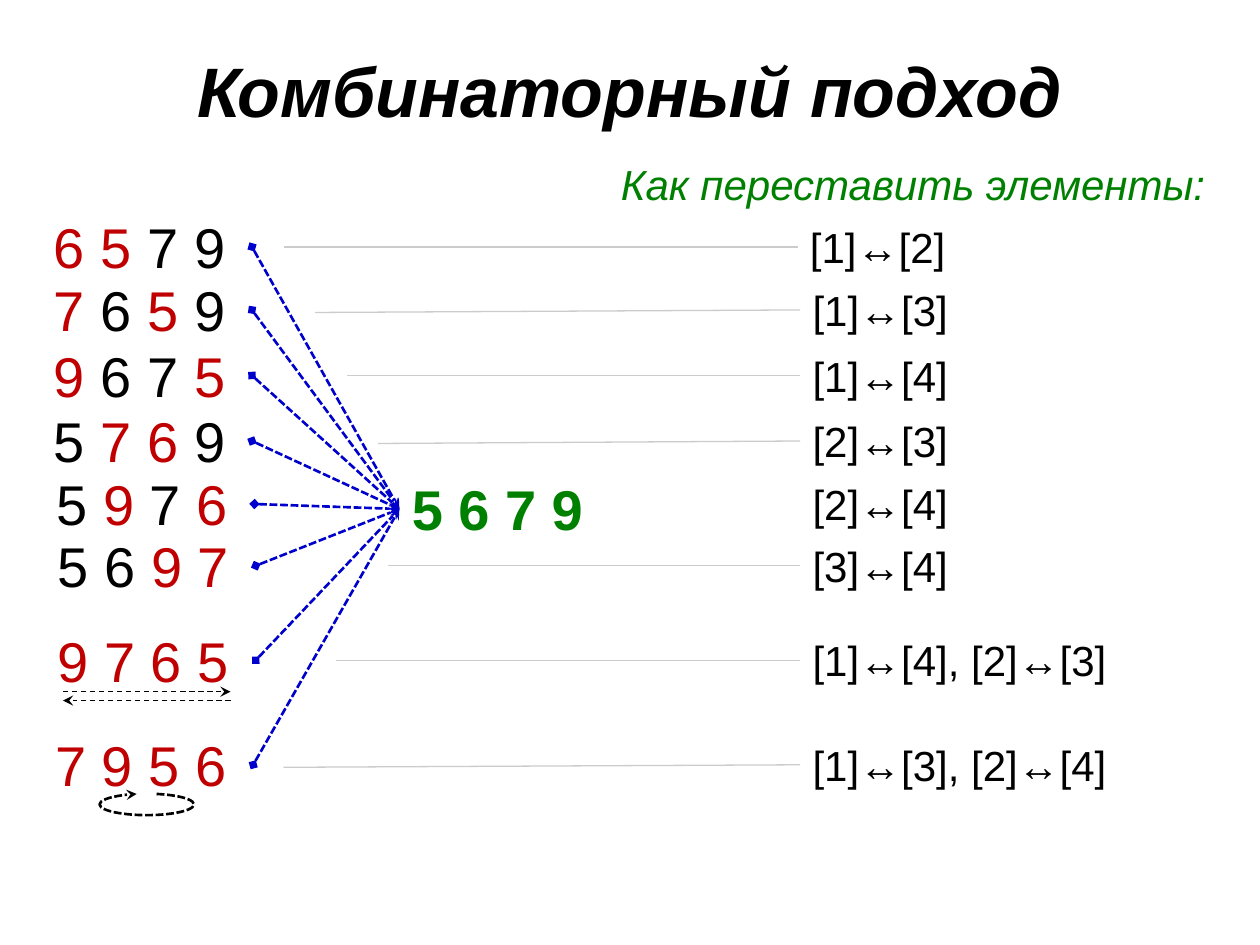
import pptx
import pptx.util
import pptx.dml.color
import pptx.enum.dml
import pptx.enum.shapes
import pptx.enum.text
import pptx.oxml
import pptx.oxml.ns

Inches = pptx.util.Inches
RGBColor = pptx.dml.color.RGBColor
Dash = pptx.enum.dml.MSO_LINE_DASH_STYLE

BLACK = RGBColor(0x00, 0x00, 0x00)
RED = RGBColor(0xC0, 0x00, 0x00)
GREEN = RGBColor(0x00, 0x80, 0x00)
BLUE = RGBColor(0x00, 0x00, 0xCC)
GREY = RGBColor(0xCC, 0xCC, 0xCC)

DIGITS_WIDTH, DIGITS_HEIGHT = 1.67, 0.64
LABEL_WIDTH, LABEL_HEIGHT = 3.65, 0.5
TOP, LEFT_SIDE, RIGHT_SIDE = 0, 1, 3

# Digits (moved ones in brackets), left, middle, swap, label left, guide end, guide drop
ROWS = [
    ("[6 5] 7 9", 0.33, 1.96, "[1]↔[2]", 6.33, 2.25, 0),
    ("[7] 6 [5] 9", 0.33, 2.46, "[1]↔[3]", 6.35, 2.5, 0.02),
    ("[9] 6 7 [5]", 0.33, 2.98, "[1]↔[4]", 6.35, 2.75, 0),
    ("5 [7 6] 9", 0.33, 3.5, "[2]↔[3]", 6.35, 3, 0.02),
    ("5 [9] 7 [6]", 0.35, 4, "[2]↔[4]", 6.35, None, 0),
    ("5 6 [9 7]", 0.36, 4.49, "[3]↔[4]", 6.35, 3.08, 0),
    ("[9 7 6 5]", 0.36, 5.24, "[1]↔[4], [2]↔[3]", 6.35, 2.67, 0),
    ("[7 9 5 6]", 0.34, 6.07, "[1]↔[3], [2]↔[4]", 6.35, 2.25, 0.02),
]


def add_text(page, left, top, width, height, spans, size, bold=None, italic=None):
    """Add a one-paragraph text box; spans are (text, colour) pairs."""
    box = page.shapes.add_textbox(Inches(left), Inches(top), Inches(width), Inches(height))
    box.text_frame.word_wrap = True
    para = box.text_frame.paragraphs[0]
    para.font.name = "Arial"
    para.font.size = pptx.util.Pt(size)
    para.font.bold = bold
    para.font.italic = italic
    for text, color in spans:
        span = para.add_run()
        span.text = text
        span.font.color.rgb = color
    return box


def add_space_before(box):
    """Put half a line of space before the paragraph."""
    namespace = pptx.oxml.ns.nsdecls("a")
    space = pptx.oxml.parse_xml(f'<a:spcBef {namespace}><a:spcPct val="50000"/></a:spcBef>')
    box.text_frame.paragraphs[0].font._element.getparent().insert(0, space)


def add_digits(page, left, middle, marked):
    """Add a permutation, with the bracketed digits in red."""
    spans = []
    for index, part in enumerate(marked.replace("]", "[").split("[")):
        if part:
            spans.append((part, RED if index % 2 else BLACK))
    box = add_text(page, left, middle - DIGITS_HEIGHT / 2, DIGITS_WIDTH, DIGITS_HEIGHT, spans, 32)
    add_space_before(box)
    return box


def style_line(shape, color, width, dash=None, head=None, tail=None):
    shape.line.color.rgb = color
    shape.line.width = pptx.util.Pt(width)
    if dash is not None:
        shape.line.dash_style = dash
    line = shape.line._get_or_add_ln()
    for tag, kind in (("headEnd", head), ("tailEnd", tail)):
        if kind:
            line.append(pptx.oxml.parse_xml(
                f'<a:{tag} {pptx.oxml.ns.nsdecls("a")} type="{kind}"/>'))


def add_line(page, start, end, color, width, **style):
    line = page.shapes.add_connector(
        pptx.enum.shapes.MSO_CONNECTOR.STRAIGHT, *map(Inches, start + end))
    style_line(line, color, width, **style)
    line._element.spPr.append(
        pptx.oxml.parse_xml(f'<a:effectLst {pptx.oxml.ns.nsdecls("a")}/>'))
    return line


def add_cycle_arrow(page):
    """Add the dashed loop under the last permutation."""
    arc = page.shapes.add_shape(
        pptx.enum.shapes.MSO_SHAPE.ARC, Inches(0.79), Inches(6.3), Inches(0.75), Inches(0.17))
    arc.shadow.inherit = False
    arc.fill.background()
    for index, degrees in enumerate((313, 226)):
        arc.adjustments[index] = degrees * 0.6
    style_line(arc, BLACK, 1.5, dash=Dash.SQUARE_DOT, tail="stealth")


def add_row(page, target, row):
    """Add a permutation, its arrow to the sorted digits, its swap and guide line."""
    digits, left, middle, swap, label_left, guide_end, drop = row
    box = add_digits(page, left, middle, digits)
    arrow = add_line(page, (left + DIGITS_WIDTH, middle), (3.17, 4.04), BLUE, 1.5,
                     dash=Dash.SQUARE_DOT, head="diamond", tail="stealth")
    arrow.begin_connect(box, RIGHT_SIDE)
    arrow.end_connect(target, LEFT_SIDE)

    label = add_text(page, label_left, middle - LABEL_HEIGHT / 2, LABEL_WIDTH, LABEL_HEIGHT,
                     [(swap, BLACK)], 24)
    add_space_before(label)
    if guide_end:
        guide = add_line(page, (label_left, middle), (guide_end, middle + drop), GREY, 0.75)
        guide.begin_connect(label, LEFT_SIDE)


def main():
    deck = pptx.Presentation()
    deck.slide_width, deck.slide_height = Inches(10), Inches(7.5)
    page = deck.slides.add_slide(deck.slide_layouts[6])

    # Title and column heading
    title = add_text(page, 0, 0, 10, 1.42, [("Комбинаторный подход", BLACK)], 40,
                     bold=True, italic=True)
    title.text_frame.vertical_anchor = pptx.enum.text.MSO_ANCHOR.MIDDLE
    title.text_frame.paragraphs[0].alignment = pptx.enum.text.PP_ALIGN.CENTER
    heading = add_text(page, 4.83, 1.21, 5, 0.5, [("Как переставить элементы:", GREEN)], 24,
                       italic=True)
    add_space_before(heading)

    # Sorted digits and the permutations that lead to them
    target = add_text(page, 3.17, 3.72, DIGITS_WIDTH, DIGITS_HEIGHT, [("5 6 7 9", GREEN)], 32,
                      bold=True)
    add_space_before(target)
    for row in ROWS:
        add_row(page, target, row)

    # Reversal and cycle marks
    for start, end, y in ((0.5, 1.83, 5.49), (1.83, 0.5, 5.56)):
        add_line(page, (start, y), (end, y), BLACK, 0.75, dash=Dash.DASH, tail="stealth")
    add_cycle_arrow(page)

    deck.save("out.pptx")


if __name__ == "__main__":
    main()
